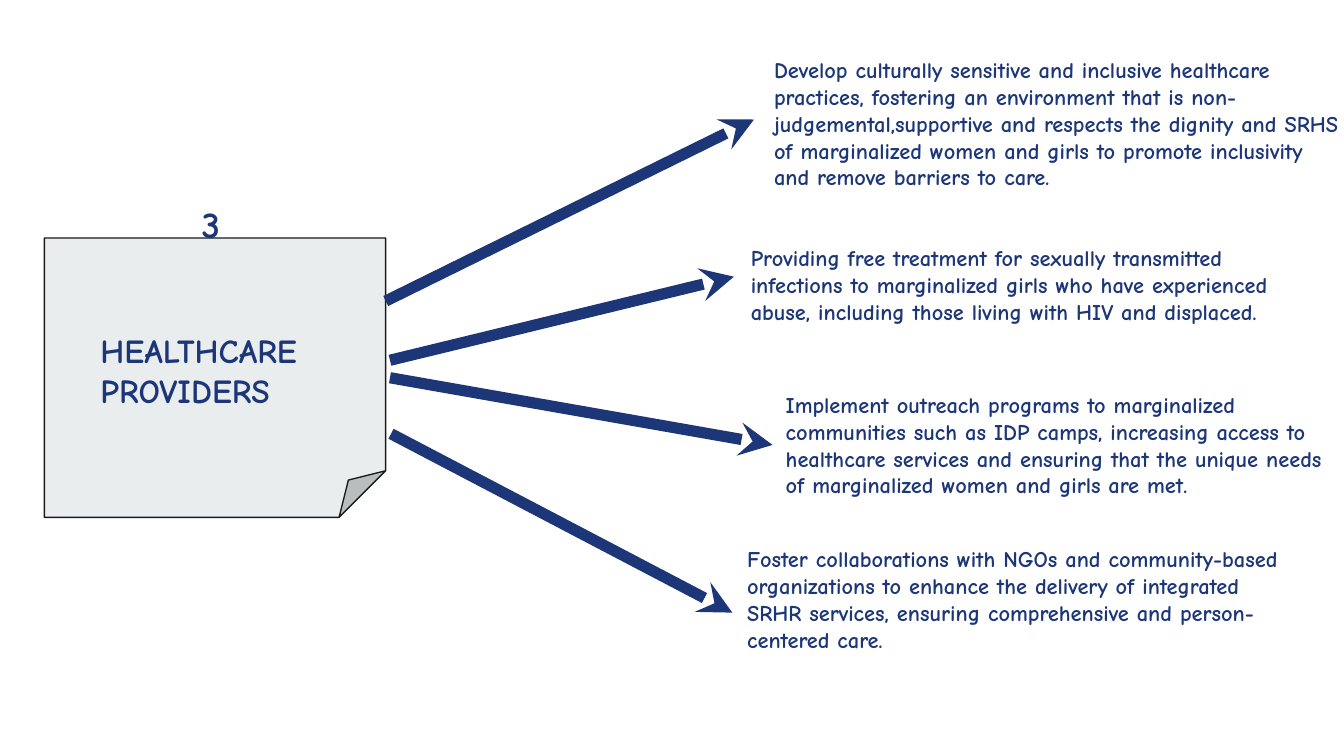
from dataclasses import dataclass

from lxml.etree import SubElement
from pptx import Presentation
from pptx.dml.color import RGBColor
from pptx.enum.shapes import MSO_CONNECTOR, MSO_SHAPE
from pptx.enum.text import MSO_AUTO_SIZE
from pptx.oxml.ns import qn
from pptx.slide import Slide
from pptx.util import Cm, Pt

FONT = "Comic Neue"
COLORS = {"navy": "1C3678", "paper": "E9EDEE", "edge": "1A1A1A"}


@dataclass
class Label:
    left: float
    top: float
    width: float
    height: float
    lines: list[str]
    size: float = 12


@dataclass
class Arrow:
    x1: float
    y1: float
    x2: float
    y2: float


TITLE = Label(1.65, 5.99, 7.24, 2.06, ["HEALTHCARE", "PROVIDERS"], 18)
NUMBER = Label(3.56, 3.56, 25.4, 1.37, ["3"], 20)
ARROWS = [
    Arrow(7.29, 5.69, 14.25, 2.26),
    Arrow(7.37, 6.81, 13.87, 5.23),
    Arrow(7.37, 7.14, 14.6, 8.41),
    Arrow(7.39, 8.2, 13.84, 11.58),
]
ACTIONS = [
    Label(14.38, 0.81, 11.3, 3.56, [
        "Develop culturally sensitive and inclusive healthcare practices, "
        "fostering an environment that is non-judgemental,supportive and "
        "respects the dignity and SRHS of marginalized women and girls to "
        "promote inclusivity and remove barriers to care."]),
    Label(13.94, 4.37, 10.85, 2.54, [
        "Providing free treatment for sexually transmitted infections to "
        "marginalized girls who have experienced abuse, including those "
        "living with HIV and displaced."]),
    Label(14.6, 7.14, 10.85, 3.05, [
        "Implement outreach programs to marginalized communities such as "
        "IDP camps, increasing access to healthcare services and ensuring "
        "that the unique needs of marginalized women and girls are met."]),
    Label(13.87, 10.06, 10.85, 2.54, [
        "Foster collaborations with NGOs and community-based organizations "
        "to enhance the delivery of integrated SRHR services, ensuring "
        "comprehensive and person-centered care."]),
]


def color(name: str) -> RGBColor:
    return RGBColor.from_string(COLORS[name])


def draw_sheet(slide: Slide) -> None:
    sheet = slide.shapes.add_shape(
        MSO_SHAPE.FOLDED_CORNER, Cm(0.84), Cm(4.5), Cm(6.45), Cm(5.28))
    sheet.shadow.inherit = False
    sheet.fill.solid()
    sheet.fill.fore_color.rgb = color("paper")
    sheet.line.color.rgb = color("edge")
    sheet.line.width = Pt(0.75)


def draw_label(slide: Slide, label: Label) -> None:
    box = slide.shapes.add_textbox(
        Cm(label.left), Cm(label.top), Cm(label.width), Cm(label.height))
    frame = box.text_frame
    frame.word_wrap = True
    frame.auto_size = MSO_AUTO_SIZE.SHAPE_TO_FIT_TEXT
    frame.margin_left = frame.margin_right = Cm(0.25)
    frame.margin_top = frame.margin_bottom = Cm(0.25)
    frame.text = "\n".join(label.lines)
    for paragraph in frame.paragraphs:
        font = paragraph.font
        font.name = FONT
        font.size = Pt(label.size)
        font.bold = True
        font.color.rgb = color("navy")


def draw_arrow(slide: Slide, arrow: Arrow) -> None:
    line = slide.shapes.add_connector(
        MSO_CONNECTOR.STRAIGHT,
        Cm(arrow.x1), Cm(arrow.y1), Cm(arrow.x2), Cm(arrow.y2))
    line.line.color.rgb = color("navy")
    line.line.width = Pt(6)
    SubElement(line.line._get_or_add_ln(), qn("a:tailEnd"), type="stealth")
    SubElement(line._element.spPr, qn("a:effectLst"))


def main() -> None:
    deck = Presentation()
    deck.slide_width, deck.slide_height = Cm(25.4), Cm(14.29)
    slide = deck.slides.add_slide(deck.slide_layouts[6])
    draw_sheet(slide)
    draw_label(slide, TITLE)
    for arrow in ARROWS:
        draw_arrow(slide, arrow)
    for label in [*ACTIONS, NUMBER]:
        draw_label(slide, label)
    deck.save("out.pptx")


if __name__ == "__main__":
    main()
